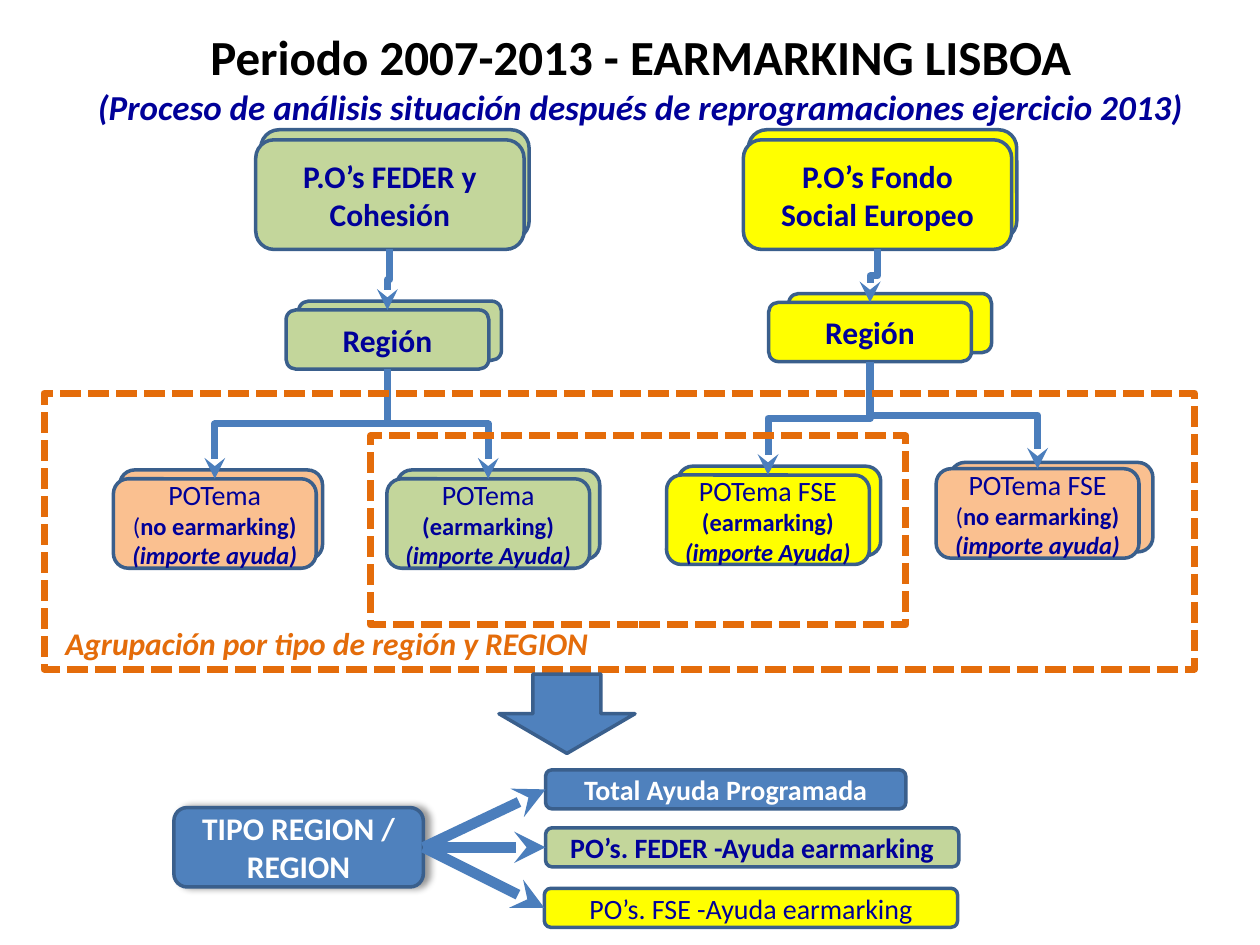
from dataclasses import dataclass

import pptx
import pptx.dml.color
import pptx.enum.dml
import pptx.enum.shapes
import pptx.enum.text
import pptx.oxml
import pptx.oxml.ns
import pptx.util

SHAPES = pptx.enum.shapes.MSO_SHAPE
CONNECTORS = pptx.enum.shapes.MSO_CONNECTOR
ANCHORS = pptx.enum.text.MSO_ANCHOR
ALIGN = pptx.enum.text.PP_ALIGN
FIT = pptx.enum.text.MSO_AUTO_SIZE

COLORS = {
    "green": "C3D69B", "yellow": "FFFF00", "peach": "FAC090", "blue": "4F81BD",
    "outline": "3A5F8C", "arrow": "4B7EBC", "orange": "E46C0A",
    "navy": "000099", "white": "FFFFFF", "black": "000000",
}
SHADOW = (
    '<a:effectLst xmlns:a="http://schemas.openxmlformats.org/drawingml/2006/main">'
    '<a:outerShdw blurRad="50800" dist="38100" dir="0" algn="l" rotWithShape="0">'
    '<a:srgbClr val="000000"><a:alpha val="40000"/></a:srgbClr>'
    '</a:outerShdw></a:effectLst>'
)

presentation = pptx.Presentation()
presentation.slide_width = pptx.util.Inches(10)
presentation.slide_height = pptx.util.Inches(7.5)
slide = presentation.slides.add_slide(presentation.slide_layouts[5])

# Lengths are in cells of a grid with 100 columns and 75 rows
COLUMN = presentation.slide_width / 100
ROW = presentation.slide_height / 75


@dataclass
class Box:
    left: float
    top: float
    width: float
    height: float

    @property
    def top_middle(self) -> tuple:
        return self.left + self.width / 2, self.top

    @property
    def bottom_middle(self) -> tuple:
        return self.left + self.width / 2, self.top + self.height

    @property
    def left_middle(self) -> tuple:
        return self.left, self.top + self.height / 2

    @property
    def right_middle(self) -> tuple:
        return self.left + self.width, self.top + self.height / 2

    def shifted(self, columns: float, rows: float) -> "Box":
        return Box(self.left + columns, self.top + rows, self.width, self.height)

    def emu(self) -> tuple:
        return (round(self.left * COLUMN), round(self.top * ROW),
                round(self.width * COLUMN), round(self.height * ROW))


@dataclass
class Line:
    text: str
    size: int
    color: str = "navy"
    bold: bool = True
    italic: bool = False
    plain_start: str = ""


@dataclass
class Card:
    box: Box
    fill: str
    lines: list
    offset: tuple = ()


@dataclass
class Branch:
    programme: Card
    region: Card
    themes: list


def rgb(name: str):
    return pptx.dml.color.RGBColor.from_string(COLORS[name])


def write(frame, lines: list, align=ALIGN.CENTER) -> None:
    for index, line in enumerate(lines):
        paragraph = frame.add_paragraph() if index else frame.paragraphs[0]
        paragraph.alignment = align
        font = paragraph.font
        font.name, font.size = "Calibri", pptx.util.Pt(line.size)
        font.bold, font.italic = line.bold, line.italic
        font.color.rgb = rgb(line.color)
        if line.plain_start:
            start = paragraph.add_run()
            start.text = line.plain_start
            start.font.bold = False
        paragraph.add_run().text = line.text


def add_block(box: Box, fill: str, kind=SHAPES.ROUNDED_RECTANGLE, lines=()):
    shape = slide.shapes.add_shape(kind, *box.emu())
    shape.shadow.inherit = False
    shape.fill.solid()
    shape.fill.fore_color.rgb = rgb(fill)
    shape.line.color.rgb = rgb("outline")
    shape.line.width = pptx.util.Pt(2)
    shape.text_frame.vertical_anchor = ANCHORS.MIDDLE
    write(shape.text_frame, lines)
    return shape


def add_card(card: Card) -> None:
    if card.offset:
        add_block(card.box.shifted(*card.offset), card.fill)
    add_block(card.box, card.fill, lines=card.lines)


def add_frame(box: Box) -> None:
    shape = slide.shapes.add_shape(SHAPES.RECTANGLE, *box.emu())
    shape.shadow.inherit = False
    shape.fill.background()
    shape.line.color.rgb = rgb("orange")
    shape.line.width = pptx.util.Pt(4)
    shape.line.dash_style = pptx.enum.dml.MSO_LINE.SQUARE_DOT


def add_arrow(kind, start: tuple, end: tuple, width: int):
    connector = slide.shapes.add_connector(
        kind, round(start[0] * COLUMN), round(start[1] * ROW),
        round(end[0] * COLUMN), round(end[1] * ROW))
    connector.line.color.rgb = rgb("arrow")
    connector.line.width = pptx.util.Pt(width)
    head = pptx.oxml.ns.qn("a:tailEnd")
    connector.line._get_or_add_ln().makeelement(head)
    line = connector.line._get_or_add_ln()
    line.append(line.makeelement(head, {"type": "stealth"}))
    properties = connector._element.spPr
    properties.append(properties.makeelement(pptx.oxml.ns.qn("a:effectLst")))
    return connector


def add_downward_elbow(start: tuple, end: tuple) -> None:
    """Turn a sideways elbow so that it leaves and arrives vertically."""
    across, down = abs(end[0] - start[0]), end[1] - start[1]
    left = (start[0] + end[0] - down) / 2
    top = (start[1] + end[1] - across) / 2
    connector = add_arrow(CONNECTORS.ELBOW, (left, top), (left + down, top + across), 4)
    transform = connector._element.spPr.xfrm
    rightward = end[0] > start[0]
    transform.set("rot", str((270 if rightward else 90) * 60000))
    if rightward:
        transform.set("flipH", "1")


def theme_card(left: float, top: float, fill: str, name: str, offset: tuple) -> Card:
    if fill == "peach":
        detail = [Line("no earmarking)", 14, plain_start="("),
                  Line("(importe ayuda)", 14, italic=True)]
    else:
        detail = [Line("(earmarking)", 14), Line("(importe Ayuda)", 14, italic=True)]
    return Card(Box(left, top, 16.1, 7.1), fill, [Line(name, 16, bold=False)] + detail, offset)


# Title and subtitle
title = slide.shapes.title
title.left, title.top, title.width, title.height = Box(2.8, 1.6, 96.1, 9.1).emu()
title.text_frame.vertical_anchor = ANCHORS.TOP
title.text_frame.auto_size = FIT.SHAPE_TO_FIT_TEXT
write(title.text_frame, [
    Line("Periodo 2007-2013 - EARMARKING LISBOA", 28, "black"),
    Line("(Proceso de análisis situación después de reprogramaciones ejercicio 2013)",
         20, italic=True),
])

# Programmes, regions and themes
branches = [
    Branch(
        Card(Box(20.3, 11.1, 21.3, 8.7), "green", [Line("P.O’s FEDER y Cohesión", 18)], (0.4, -0.8)),
        Card(Box(22.7, 24.6, 16.1, 4.7), "green", [Line("Región", 18)], (1, -0.7)),
        [theme_card(9, 38, "peach", "POTema", (0.5, -0.7)),
         theme_card(30.7, 38, "green", "POTema", (0.8, -0.7))]),
    Branch(
        Card(Box(59, 11.1, 21.3, 8.7), "yellow", [Line("P.O’s Fondo Social Europeo", 18)], (0.4, -0.8)),
        Card(Box(61, 24, 16.1, 4.7), "yellow", [Line("Región", 18)], (1.6, -0.7)),
        [theme_card(52.9, 37.7, "yellow", "POTema FSE", (0.9, -0.7)),
         theme_card(74.3, 37.2, "peach", "POTema FSE", (1.1, -0.5))]),
]
for branch in branches:
    for card in (branch.programme, branch.region, *branch.themes):
        add_card(card)
    add_downward_elbow(branch.programme.box.bottom_middle, branch.region.box.top_middle)
    for theme in branch.themes:
        add_downward_elbow(branch.region.box.bottom_middle, theme.box.top_middle)

# Dashed grouping frames and their label
add_frame(Box(29.4, 34.6, 42.5, 15))
add_frame(Box(3.5, 31.2, 91.3, 21.9))
label = slide.shapes.add_textbox(*Box(4.2, 49, 44, 4).emu())
label.text_frame.word_wrap = False
label.text_frame.auto_size = FIT.SHAPE_TO_FIT_TEXT
write(label.text_frame, [Line("Agrupación por tipo de región y REGION", 18, "orange", italic=True)],
      ALIGN.LEFT)

# Result by region type
add_block(Box(39.6, 53.5, 10.8, 6.3), "blue", SHAPES.DOWN_ARROW)
source = Box(13.8, 64.1, 19.8, 6.3)
source_shape = add_block(source, "blue", lines=[Line("TIPO REGION / REGION", 18, "white")])
properties = source_shape._element.spPr
properties.remove(properties.find(pptx.oxml.ns.qn("a:effectLst")))
properties.append(pptx.oxml.parse_xml(SHADOW))

results = [
    Card(Box(43.3, 61.1, 28.6, 3.1), "blue", [Line("Total Ayuda Programada", 16, "white")]),
    Card(Box(43.3, 65.7, 32.8, 3.1), "green", [Line("PO’s. FEDER -Ayuda earmarking", 16)]),
    Card(Box(43.2, 70.5, 32.8, 3.1), "yellow", [Line("PO’s. FSE -Ayuda earmarking", 16, bold=False)]),
]
for result in results:
    add_card(result)
    add_arrow(CONNECTORS.STRAIGHT, source.right_middle, result.box.left_middle, 6)

presentation.save("out.pptx")
